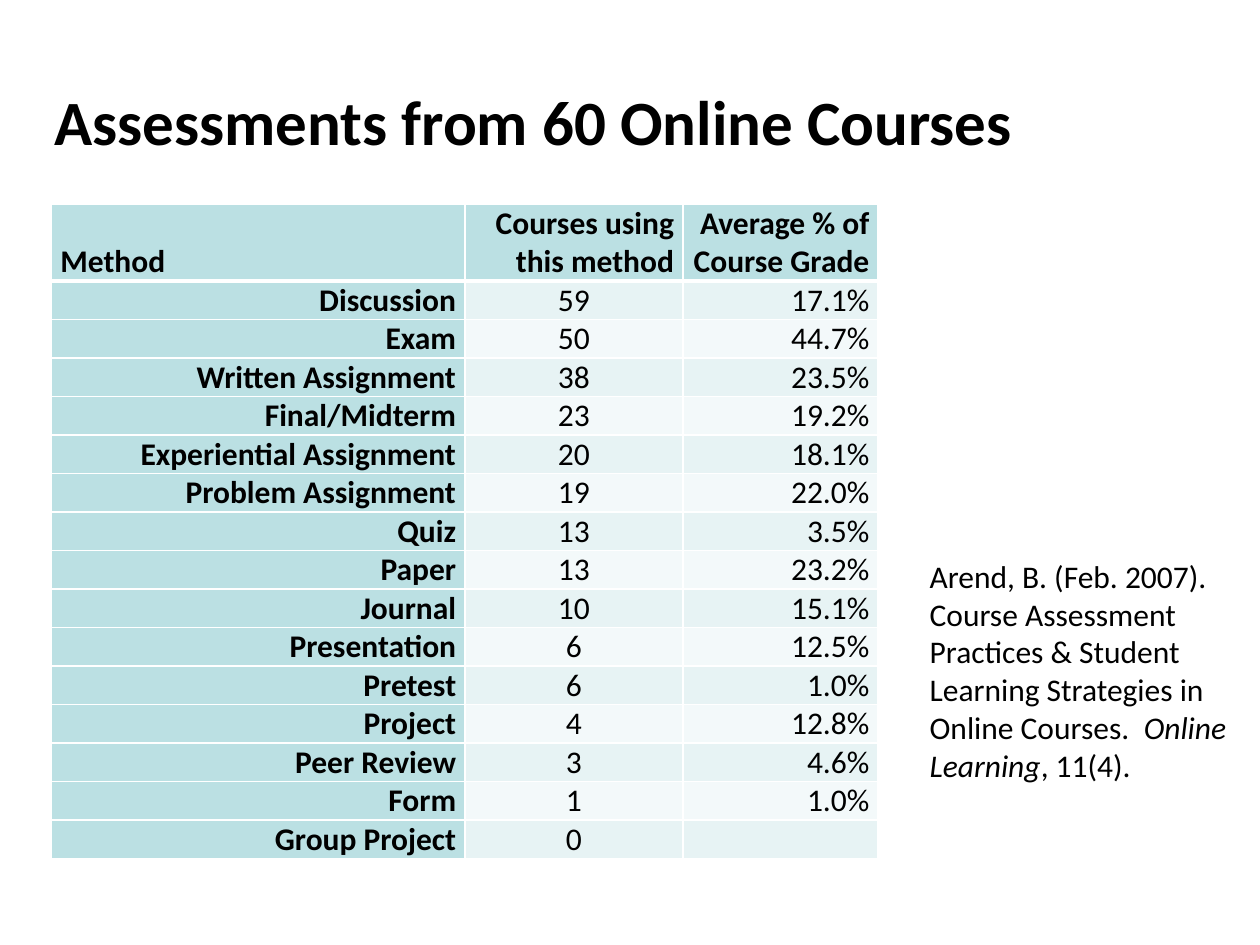
from lxml import etree
from pptx import Presentation, util as u
from pptx.dml.color import RGBColor
from pptx.enum import text
from pptx.oxml import ns

BLACK = RGBColor(0x00, 0x00, 0x00)
WHITE = RGBColor(0xFF, 0xFF, 0xFF)
TEAL = RGBColor(0xBB, 0xE0, 0xE3)
BANDS = RGBColor(0xE7, 0xF3, 0xF4), RGBColor(0xF3, 0xF9, 0xFA)
LEFT, MID, RIGHT = text.PP_ALIGN.LEFT, text.PP_ALIGN.CENTER, text.PP_ALIGN.RIGHT

HEADS = ["Method", "Courses using this method", "Average % of Course Grade"]
DATA = [
    ("Discussion", "59", "17.1%"),
    ("Exam", "50", "44.7%"),
    ("Written Assignment", "38", "23.5%"),
    ("Final/Midterm", "23", "19.2%"),
    ("Experiential Assignment", "20", "18.1%"),
    ("Problem Assignment", "19", "22.0%"),
    ("Quiz", "13", "3.5%"),
    ("Paper", "13", "23.2%"),
    ("Journal", "10", "15.1%"),
    ("Presentation", "6", "12.5%"),
    ("Pretest", "6", "1.0%"),
    ("Project", "4", "12.8%"),
    ("Peer Review", "3", "4.6%"),
    ("Form", "1", "1.0%"),
    ("Group Project", "0", ""),
]
SOURCE = [
    ("Arend, B. (Feb. 2007). Course Assessment Practices & Student "
     "Learning Strategies in Online Courses.  ", False),
    ("Online Learning", True),
    (", 11(4).", False),
]


class Deck:
    """Hold the text style and the current slide, and add elements to it."""

    def __init__(self, slide, face="Calibri", size=18):
        self.slide, self.face, self.size = slide, face, size

    def run(self, para, words, size=None, bold=False, slant=False):
        run = para.add_run()
        run.text = words
        font = run.font
        font.name, font.size = self.face, u.Pt(size or self.size)
        font.bold, font.italic = bold, slant
        font.color.rgb = BLACK

    def title(self, words, left, top, width, height):
        box = self.slide.shapes.title
        box.left, box.top = u.Inches(left), u.Inches(top)
        box.width, box.height = u.Inches(width), u.Inches(height)
        box.text_frame.vertical_anchor = text.MSO_ANCHOR.MIDDLE
        para = box.text_frame.paragraphs[0]
        para.alignment = LEFT
        self.run(para, words, 36, True)

    def note(self, parts, left, top, width, height):
        box = self.slide.shapes.add_textbox(
            u.Inches(left), u.Inches(top), u.Inches(width), u.Inches(height))
        frame = box.text_frame
        frame.word_wrap = True
        for words, slant in parts:
            self.run(frame.paragraphs[0], words, slant=slant)

    def edge(self, cell, side, width):
        props = cell._tc.get_or_add_tcPr()
        line = etree.SubElement(props, ns.qn(f"a:ln{side}"), w=str(u.Pt(width)))
        fill = etree.SubElement(line, ns.qn("a:solidFill"))
        etree.SubElement(fill, ns.qn("a:srgbClr"), val=str(WHITE))

    def cell(self, cell, words, align, fill, bold, top, base):
        cell.margin_left = cell.margin_right = u.Inches(0.07)
        cell.margin_top = cell.margin_bottom = 0
        cell.vertical_anchor = text.MSO_ANCHOR.BOTTOM
        for side, width in zip("LRTB", (1, 1, top, base)):
            self.edge(cell, side, width)
        cell.fill.solid()
        cell.fill.fore_color.rgb = fill
        para = cell.text_frame.paragraphs[0]
        para.alignment = align
        if words:
            self.run(para, words, bold=bold)
        else:
            para.font.size = u.Pt(self.size)

    def table(self, heads, data, left, top, widths, head, step):
        rows = [heads, *data]
        grid = self.slide.shapes.add_table(
            len(rows), len(heads), u.Inches(left), u.Inches(top),
            u.Inches(sum(widths)), u.Inches(head + step * len(data))).table
        for col, width in zip(grid.columns, widths):
            col.width = u.Inches(width)
        for r, row in enumerate(rows):
            grid.rows[r].height = u.Inches(step if r else head)
            aligns = (RIGHT, MID, RIGHT) if r else (LEFT, RIGHT, RIGHT)
            for c, words in enumerate(row):
                bold = r == 0 or c == 0
                fill = TEAL if bold else BANDS[(r - 1) % 2]
                self.cell(grid.cell(r, c), words, aligns[c], fill, bold,
                          3 if r == 1 else 1, 3 if r == 0 else 1)


def main():
    show = Presentation()
    show.slide_width, show.slide_height = u.Inches(10), u.Inches(7.5)
    deck = Deck(show.slides.add_slide(show.slide_layouts[5]))
    deck.title("Assessments from 60 Online Courses", 0.33, 0.33, 9.42, 1.25)
    deck.table(HEADS, DATA, 0.41, 1.62, (3.28, 1.73, 1.55), 0.61, 0.3)
    deck.note(SOURCE, 7.28, 4.37, 2.72, 1.92)
    show.save("out.pptx")


if __name__ == "__main__":
    main()
